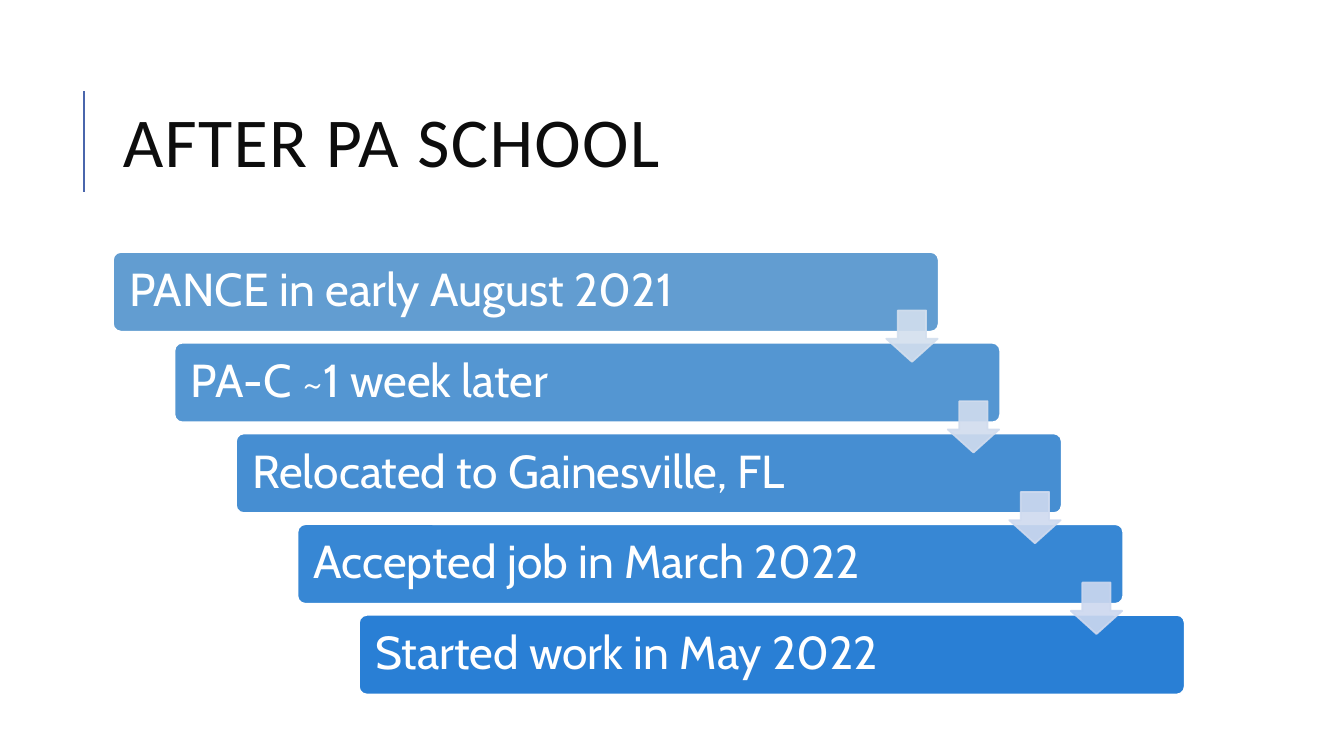
from lxml.etree import SubElement
from pptx import Presentation
from pptx.dml.color import RGBColor
from pptx.enum.shapes import MSO_CONNECTOR, MSO_SHAPE
from pptx.enum.text import MSO_ANCHOR, PP_ALIGN
from pptx.oxml.ns import qn
from pptx.util import Inches, Pt

WHITE = RGBColor(0xFF, 0xFF, 0xFF)
INK = RGBColor(0x0D, 0x0D, 0x0D)
ACCENT = RGBColor(0x4A, 0x66, 0xAC)
STEPS = [
    ("PANCE in early August 2021", RGBColor(0x62, 0x9D, 0xD1)),
    ("PA-C ~1 week later", RGBColor(0x54, 0x96, 0xD2)),
    ("Relocated to Gainesville, FL", RGBColor(0x46, 0x8E, 0xD2)),
    ("Accepted job in March 2022", RGBColor(0x37, 0x87, 0xD4)),
    ("Started work in May 2022", RGBColor(0x29, 0x7F, 0xD5)),
]
ARROW_TINTS = [
    RGBColor(0xD3, 0xDF, 0xEE),
    RGBColor(0xD1, 0xDC, 0xEE),
    RGBColor(0xCF, 0xDA, 0xEF),
    RGBColor(0xCD, 0xD8, 0xEF),
]
STEP_X, STEP_Y = 0.61, 0.9


class StaircaseSlide:
    """Draws the parts of a staircase timeline on one slide."""

    def __init__(self, slide):
        self.slide = slide
        self.title_font, self.step_font = "Calibri", "Cabin"

    def set_words(self, frame, words, font_name, size, color, line_spacing):
        frame.text = words
        frame.word_wrap = True
        frame.vertical_anchor = MSO_ANCHOR.MIDDLE
        paragraph = frame.paragraphs[0]
        paragraph.alignment = PP_ALIGN.LEFT
        paragraph.line_spacing = line_spacing
        font = paragraph.runs[0].font
        font.name, font.size = font_name, Pt(size)
        font.color.rgb = color
        return paragraph.runs[0]

    def rule(self, x, top, bottom):
        rule = self.slide.shapes.add_connector(
            MSO_CONNECTOR.STRAIGHT, Inches(x), Inches(bottom), Inches(x), Inches(top))
        rule.line.color.rgb = ACCENT
        rule.line.width = Pt(1.5)
        SubElement(rule._element.spPr, qn("a:effectLst"))

    def title(self, words, left, top, width, height):
        heading = self.slide.shapes.add_textbox(
            Inches(left), Inches(top), Inches(width), Inches(height))
        run = self.set_words(heading.text_frame, words, self.title_font, 50, INK, 0.8)
        run._r.get_or_add_rPr().set("spc", "100")

    def block(self, kind, left, top, width, height, adjustments, fill, outline):
        block = self.slide.shapes.add_shape(
            kind, Inches(left), Inches(top), Inches(width), Inches(height))
        for index, value in enumerate(adjustments):
            block.adjustments[index] = value
        block.shadow.inherit = False
        block.fill.solid()
        block.fill.fore_color.rgb = fill
        block.line.color.rgb = outline
        block.line.width = Pt(1.25)
        return block

    def step(self, words, left, top, fill):
        bar = self.block(MSO_SHAPE.ROUNDED_RECTANGLE, left, top, 8.19, 0.79,
                         [0.1], fill, WHITE)
        frame = bar.text_frame
        frame.margin_left = frame.margin_right = Inches(0.14)
        frame.margin_top = frame.margin_bottom = Inches(0.14)
        self.set_words(frame, words, self.step_font, 33, WHITE, 0.9)

    def arrow(self, left, top, tint):
        arrow = self.block(MSO_SHAPE.DOWN_ARROW, left, top, 0.51, 0.51,
                           [0.55, 0.45], tint, tint)
        for color in arrow._element.spPr.iter(qn("a:srgbClr")):
            SubElement(color, qn("a:alpha"), val="90000")


def main():
    presentation = Presentation()
    presentation.slide_width = Inches(13.33)
    presentation.slide_height = Inches(7.5)
    staircase = StaircaseSlide(
        presentation.slides.add_slide(presentation.slide_layouts[6]))
    staircase.rule(0.83, 0.9, 1.9)
    staircase.title("AFTER PA SCHOOL", 1.12, 0.64, 10.63, 1.64)
    for row, (words, fill) in enumerate(STEPS):
        staircase.step(words, 1.12 + row * STEP_X, 2.5 + row * STEP_Y, fill)
    for row, tint in enumerate(ARROW_TINTS):
        staircase.arrow(8.79 + row * STEP_X, 3.08 + row * STEP_Y, tint)
    presentation.save("out.pptx")


if __name__ == "__main__":
    main()
